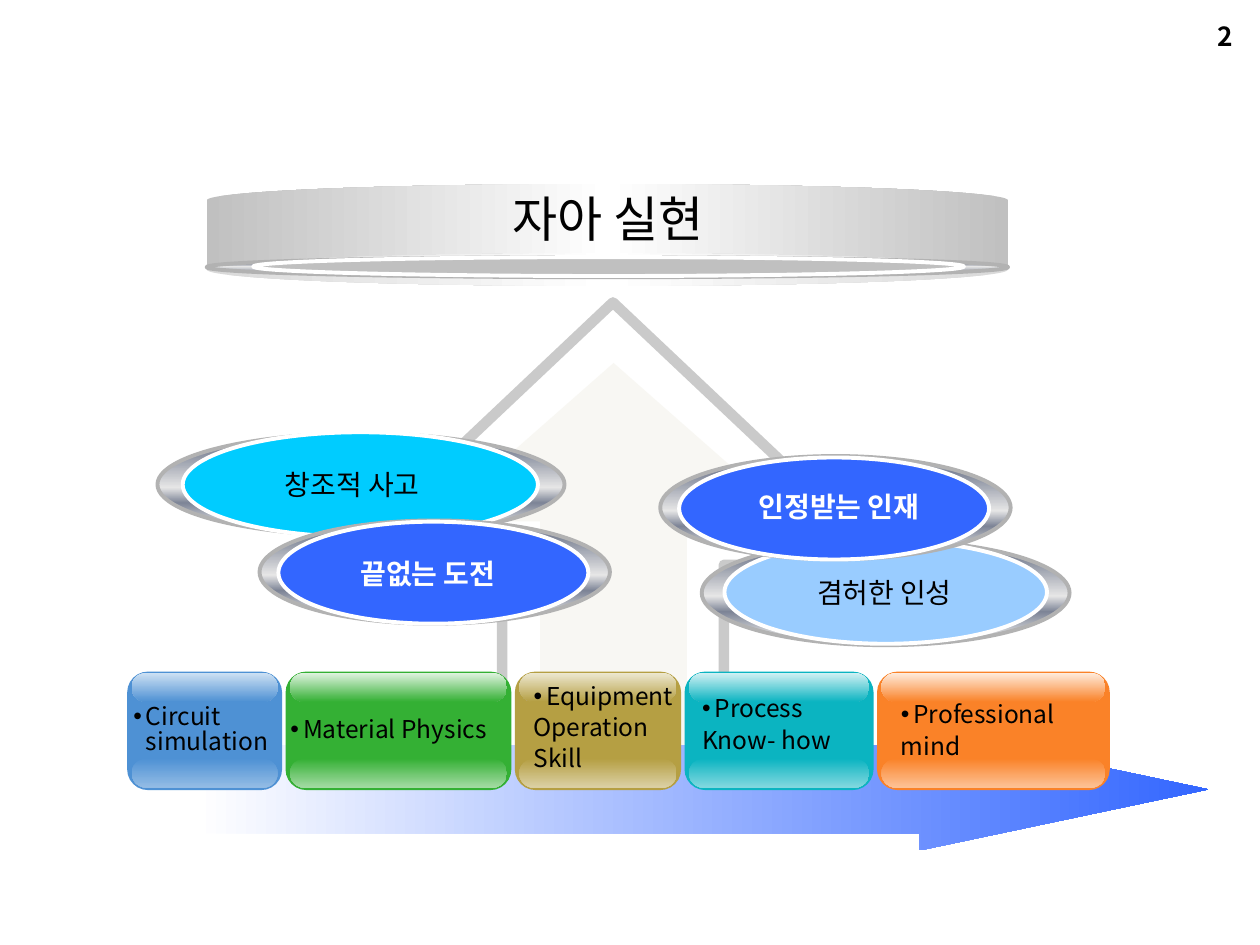
from dataclasses import dataclass

from lxml.etree import SubElement
from pptx import Presentation
from pptx.dml.color import RGBColor
from pptx.enum.shapes import MSO_SHAPE
from pptx.enum.text import MSO_ANCHOR, PP_ALIGN
from pptx.oxml.ns import qn
from pptx.util import Pt


@dataclass(frozen=True)
class Theme:
    font: str = "Noto Sans CJK KR"
    title_font: str = "Arial"
    black: str = "000000"
    white: str = "FFFFFF"
    blue: str = "3366FF"
    sky: str = "99CCFF"
    cyan: str = "00CCFF"
    silver: str = "C0C0C0"
    rim: str = "B2B2B2"
    outline: str = "969696"
    cream: str = "EEECE1"
    metal: tuple = ((0, "E6E6E6"), (15, "7D8496"), (53, "E6E6E6"),
                    (68, "7D8496"), (93, "E6E6E6"), (100, "FFFFFF"))
    title_size: int = 28
    label_size: int = 16
    number_size: int = 15
    card_size: int = 14


T = Theme()
CARD_TOP, CARD_HEIGHT, CARD_GAP, BAND_INSET = 383.8, 67.7, 2, 2.5

OVALS = [
    ((401, 308.9, 210.2, 59.8), (414, 308.9, 184.3, 59), T.sky,
     "겸허한 인성", (455, 325.4, 100.8, 26.6), False),
    ((90, 247.7, 232.6, 58.3), (104.4, 247, 203, 59.8), T.cyan,
     "창조적 사고", (151.2, 263.5, 100.1, 26.6), False),
    ((148.3, 297.4, 200.2, 59), (159.1, 298.1, 177.1, 58.3), T.blue,
     "끝없는 도전", (182.2, 314.6, 124.6, 26.6), True),
    ((377.3, 260.6, 200.2, 59), (388.1, 261.4, 177.1, 58.3), T.blue,
     "인정받는 인재", (388.8, 276.5, 181.4, 26.6), True),
]

CARDS = [
    (88.5, "4E91D4", "CEE1F3", "93BCE5", ["Circuit simulation"],
     (-3.6, 9.3, 108), MSO_ANCHOR.MIDDLE),
    (129, "34B034", "E0F3E0", "A3DBA3", ["Material Physics"],
     (-4.3, 9.3, 149), MSO_ANCHOR.MIDDLE),
    (95, "B59F43", "EDE8D1", "DBD0A4", ["Equipment", "Operation", "Skill"],
     (3.6, 4.3, 106.6), MSO_ANCHOR.TOP),
    (108, "0BB4C1", "D3F1F4", "82D8DF", ["Process", "Know- how"],
     (2.9, 11.5, 149), MSO_ANCHOR.TOP),
    (133, "FA8228", "FEECDE", "FDC296", ["Professional", "mind"],
     (6.5, 10, 126.7), MSO_ANCHOR.MIDDLE),
]


def rgb(color):
    return RGBColor.from_string(color)


def set_alpha(color_format_parent, percent):
    color = next(color_format_parent.iter(qn("a:srgbClr")))
    SubElement(color, qn("a:alpha"), val=str(percent * 1000))


def set_gradient(sp, stops, angle):
    sp.fill.gradient()
    grad = sp.element.spPr.find(qn("a:gradFill"))
    for child in list(grad):
        grad.remove(child)
    grad.set("rotWithShape", "1")
    stop_list = SubElement(grad, qn("a:gsLst"))
    for position, color in stops:
        stop = SubElement(stop_list, qn("a:gs"), pos=str(position * 1000))
        SubElement(stop, qn("a:srgbClr"), val=color)
    SubElement(grad, qn("a:lin"), ang=str(angle * 60000), scaled="0")


def add_shape(s, kind, box, fill=None, angle=90, line=None, width=2.25, adj=(), rotation=0):
    sp = s.shapes.add_shape(kind, *map(Pt, box))
    sp.shadow.inherit = False
    sp.rotation = rotation
    for i, value in enumerate(adj):
        sp.adjustments[i] = value
    if fill is None:
        sp.fill.background()
    elif isinstance(fill, str):
        sp.fill.solid()
        sp.fill.fore_color.rgb = rgb(fill)
    else:
        set_gradient(sp, fill, angle)
    if line:
        sp.line.color.rgb = rgb(line)
        sp.line.width = Pt(width)
    else:
        sp.line.fill.background()
    return sp


def add_run(p, text, size, color=T.black, bold=False, font=T.font):
    r = p.add_run()
    r.text = text
    r.font.size, r.font.bold, r.font.name = Pt(size), bold, font
    r.font.color.rgb = rgb(color)
    SubElement(r.font._element, qn("a:ea"), typeface=T.font)


def add_text(s, box, text, size, align, color=T.black, bold=False):
    tf = s.shapes.add_textbox(*map(Pt, box)).text_frame
    tf.word_wrap = True
    p = tf.paragraphs[0]
    p.alignment = align
    add_run(p, text, size, color, bold)


def add_house(s):
    outline = add_shape(s, MSO_SHAPE.UP_ARROW, (191.5, 172.8, 317.5, 277.2),
                        line=T.outline, width=6, adj=(0.399, 0.541))
    set_alpha(outline.element.spPr.find(qn("a:ln")), 50)
    core = add_shape(s, MSO_SHAPE.UP_ARROW, (247.7, 207.4, 205.9, 218.2),
                     T.cream, adj=(0.407, 0.44))
    set_alpha(core.element.spPr.find(qn("a:solidFill")), 39)


def add_oval(s, outer, inner, color, text, label_box, emphasized):
    add_shape(s, MSO_SHAPE.OVAL, outer, T.metal, line=T.rim)
    add_shape(s, MSO_SHAPE.OVAL, inner, color, line=T.white)
    add_text(s, label_box, text, T.label_size, PP_ALIGN.CENTER,
             T.white if emphasized else T.black, emphasized)


def add_card(s, left, width, color, top_tint, bottom_tint, lines, text_place, anchor):
    add_shape(s, MSO_SHAPE.ROUNDED_RECTANGLE,
              (left, CARD_TOP, width, CARD_HEIGHT), color, adj=(0.175,))
    bands = ((49.7, (color, bottom_tint)), (0.7, (top_tint, color)))
    for offset, (start, end) in bands:
        add_shape(s, MSO_SHAPE.ROUNDED_RECTANGLE,
                  (left + BAND_INSET, CARD_TOP + offset, width - 2 * BAND_INSET, 16.6),
                  ((0, start), (100, end)), adj=(0.5,))
    dx, dy, text_width = text_place
    tf = s.shapes.add_textbox(Pt(left + dx), Pt(CARD_TOP + dy), Pt(text_width), Pt(49)).text_frame
    tf.word_wrap = True
    tf.vertical_anchor = anchor
    for i, line in enumerate(lines):
        p = tf.paragraphs[0] if i == 0 else tf.add_paragraph()
        p.space_before = Pt(3.5)
        p.line_spacing = 0.85
        pPr = p._p.get_or_add_pPr()
        pPr.set("marL", str(Pt(7.2)))
        pPr.set("indent", str(-Pt(7.2)))
        if i == 0:
            SubElement(pPr, qn("a:buFont"), typeface=T.title_font)
            SubElement(pPr, qn("a:buChar"), char="•")
        add_run(p, line, T.card_size)


def add_disc(s):
    add_shape(s, MSO_SHAPE.CAN, (118.1, 105.1, 457.9, 58.3),
              ((0, T.silver), (50, T.white), (100, T.silver)), 0, adj=(0.321,), rotation=180)
    add_shape(s, MSO_SHAPE.OVAL, (118.1, 146.9, 457.9, 11.5), T.metal, line=T.rim, rotation=180)
    add_shape(s, MSO_SHAPE.OVAL, (144.7, 146.9, 406.1, 10.8), T.silver, line=T.white, rotation=180)


def set_title(s, text):
    title = s.shapes.title
    title.left, title.top, title.width, title.height = map(Pt, (117.4, 101.5, 460, 46))
    tf = title.text_frame
    tf.margin_left = tf.margin_right = tf.margin_top = tf.margin_bottom = 0
    tf.vertical_anchor = MSO_ANCHOR.MIDDLE
    p = tf.paragraphs[0]
    p.alignment = PP_ALIGN.CENTER
    add_run(p, text, T.title_size, font=T.title_font)
    title.element.getparent().append(title.element)


def main():
    prs = Presentation()
    prs.slide_width, prs.slide_height = Pt(720), Pt(540)
    s = prs.slides.add_slide(prs.slide_layouts[5])
    add_text(s, (543.6, 7.9, 167.8, 18), "2", T.number_size, PP_ALIGN.RIGHT, bold=True)
    add_house(s)
    for oval in OVALS:
        add_oval(s, *oval)
    add_shape(s, MSO_SHAPE.RIGHT_ARROW, (112.3, 416.2, 578.2, 69.8),
              ((0, T.white), (100, T.blue)), 0, adj=(0.722, 2.364))
    left = 72.7
    for card in CARDS:
        add_card(s, left, *card)
        left += card[0] + CARD_GAP
    add_disc(s)
    set_title(s, "자아 실현")
    prs.save("out.pptx")


if __name__ == "__main__":
    main()
